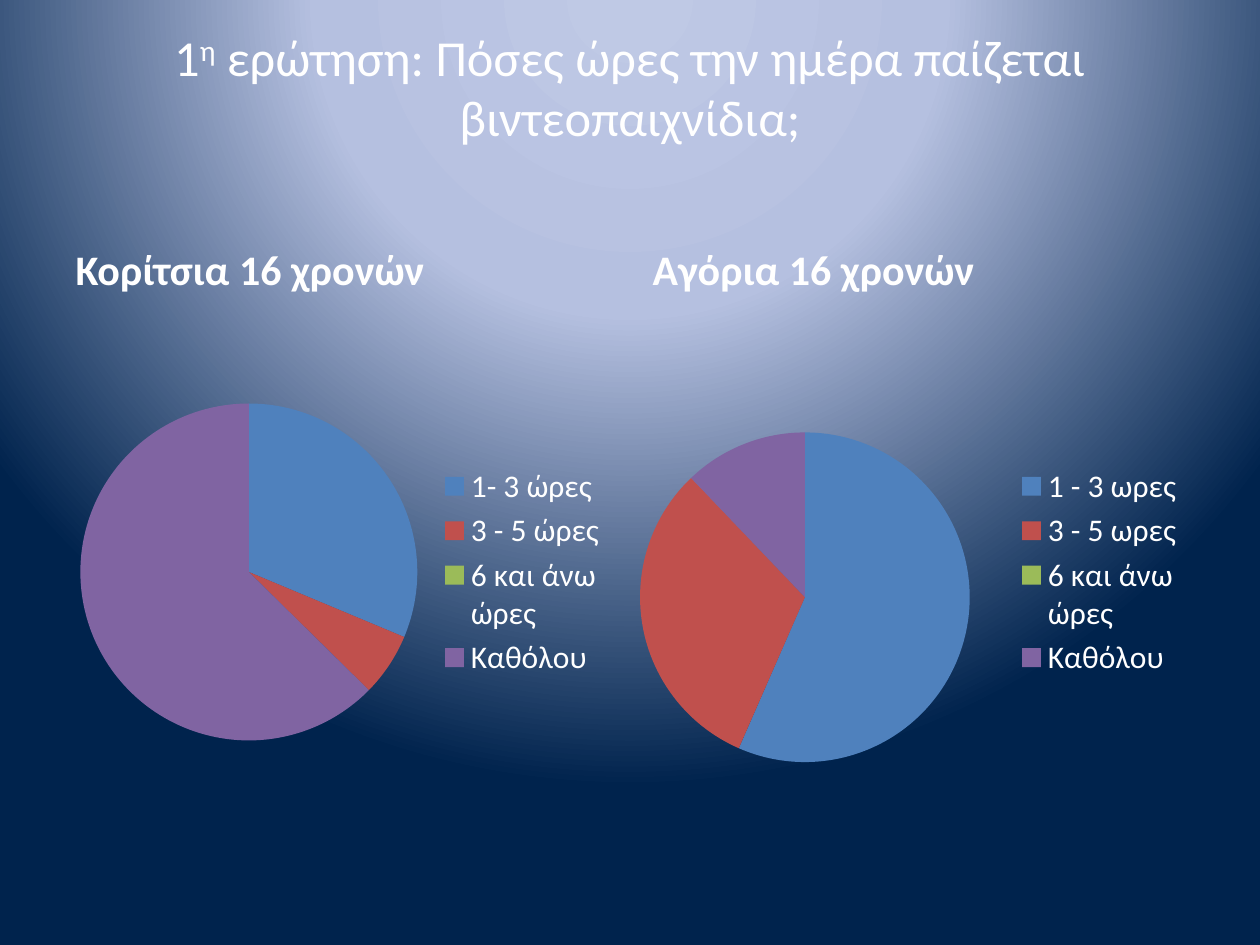
from lxml import etree
from pptx import Presentation
from pptx import util as u
from pptx.chart.data import CategoryChartData
from pptx.dml.color import RGBColor
from pptx.enum import chart as charts, text
from pptx.oxml.ns import qn

WHITE = RGBColor(0xFF, 0xFF, 0xFF)
SLICES = [RGBColor(0x4F, 0x81, 0xBD), RGBColor(0xC0, 0x50, 0x4D),
          RGBColor(0x9B, 0xBB, 0x59), RGBColor(0x80, 0x64, 0xA2)]
GLOW = [(0, RGBColor(0xBF, 0xC9, 0xE5)), (40, RGBColor(0xB5, 0xC0, 0xE0)),
        (100, RGBColor(0x00, 0x23, 0x4D))]
GLOW_CENTRE = {"l": 50, "t": -80, "r": 50, "b": 180}
LAST_LABELS = ["6 και άνω ώρες", "Καθόλου"]
GROUPS = [
    (0.5, 1, "Κορίτσια 16 χρονών", ["1- 3 ώρες", "3 - 5 ώρες"], [31, 6, 0, 62], None),
    (5.08, 3, "Αγόρια 16 χρονών", ["1 - 3 ωρες", "3 - 5 ωρες"], [56, 31, 0, 12],
     {"x": 0, "y": 0.095, "w": 0.592, "h": 0.903}),
]
COLUMN_WIDTH = 4.42


def set_background(slide):
    """Fill the slide with a circular glow from above its top edge."""
    fill = slide.background.fill
    fill.gradient()
    gradient = slide.element.find(".//" + qn("a:gradFill"))
    for child in list(gradient):
        gradient.remove(child)
    stops = etree.SubElement(gradient, qn("a:gsLst"))
    for position, color in GLOW:
        stop = etree.SubElement(stops, qn("a:gs"), pos=str(position * 1000))
        etree.SubElement(stop, qn("a:srgbClr"), val=str(color))
    circle = etree.SubElement(gradient, qn("a:path"), path="circle")
    etree.SubElement(circle, qn("a:fillToRect"),
                     {side: str(value * 1000) for side, value in GLOW_CENTRE.items()})


def style_font(font, size, bold=None):
    """Apply the white slide typeface at the given size."""
    font.name = "Calibri"
    font.size = u.Pt(size)
    font.bold = bold
    font.color.rgb = WHITE


def place(shape, left, top, width, height, anchor):
    """Move a placeholder and return its first paragraph."""
    shape.left, shape.top = u.Inches(left), u.Inches(top)
    shape.width, shape.height = u.Inches(width), u.Inches(height)
    frame = shape.text_frame
    frame.auto_size = text.MSO_AUTO_SIZE.NONE
    frame.word_wrap = True
    frame.vertical_anchor = anchor
    return frame.paragraphs[0]


def fill_title(shape):
    """Write the question with its raised ordinal ending."""
    paragraph = place(shape, 0.5, 0.3, 9, 1.25, text.MSO_ANCHOR.MIDDLE)
    paragraph.alignment = text.PP_ALIGN.CENTER
    style_font(paragraph.font, 28.8)
    for part in ["1", "η", " ερώτηση: Πόσες ώρες την ημέρα παίζεται βιντεοπαιχνίδια;"]:
        run = paragraph.add_run()
        run.text = part
        if part == "η":
            run.font._element.set("baseline", "30000")
    paragraph.add_line_break()


def fill_heading(shape, left, heading):
    """Write a bold heading above a chart."""
    paragraph = place(shape, left, 1.68, COLUMN_WIDTH, 0.7, text.MSO_ANCHOR.BOTTOM)
    paragraph.text = heading
    style_font(paragraph.font, 24, True)


def set_plot_layout(chart, layout):
    """Fix the inner plot area as fractions of the chart."""
    plot_area = chart._chartSpace.chart.plotArea
    for old in plot_area.findall(qn("c:layout")):
        plot_area.remove(old)
    holder = etree.Element(qn("c:layout"))
    plot_area.insert(0, holder)
    manual = etree.SubElement(holder, qn("c:manualLayout"))
    settings = {"layoutTarget": "inner", "xMode": "edge", "yMode": "edge", **layout}
    for name, value in settings.items():
        etree.SubElement(manual, qn("c:" + name), val=str(value))


def add_pie(slide, left, labels, values, layout):
    """Add a pie chart with its legend on the right."""
    data = CategoryChartData()
    data.categories = labels
    data.add_series("Series 1", values)
    chart = slide.shapes.add_chart(
        charts.XL_CHART_TYPE.PIE, u.Inches(left), u.Inches(2.38),
        u.Inches(COLUMN_WIDTH), u.Inches(4.32), data).chart
    style_font(chart.font, 18)
    chart.has_title = False
    chart.has_legend = True
    chart.legend.position = charts.XL_LEGEND_POSITION.RIGHT
    chart.legend.include_in_layout = False
    chart.plots[0].vary_by_categories = True
    for index, color in enumerate(SLICES):
        fill = chart.plots[0].series[0].points[index].format.fill
        fill.solid()
        fill.fore_color.rgb = color
    if layout:
        set_plot_layout(chart, layout)


def main():
    """Build the slide and save it."""
    presentation = Presentation()
    presentation.slide_width, presentation.slide_height = u.Inches(10), u.Inches(7.5)
    slide = presentation.slides.add_slide(presentation.slide_layouts[4])
    set_background(slide)
    holders = {shape.placeholder_format.idx: shape for shape in slide.placeholders}
    fill_title(holders[0])
    for left, index, heading, labels, values, layout in GROUPS:
        fill_heading(holders[index], left, heading)
        empty = holders[index + 1].element
        empty.getparent().remove(empty)
        add_pie(slide, left, labels + LAST_LABELS, values, layout)
    presentation.save("out.pptx")


if __name__ == "__main__":
    main()
